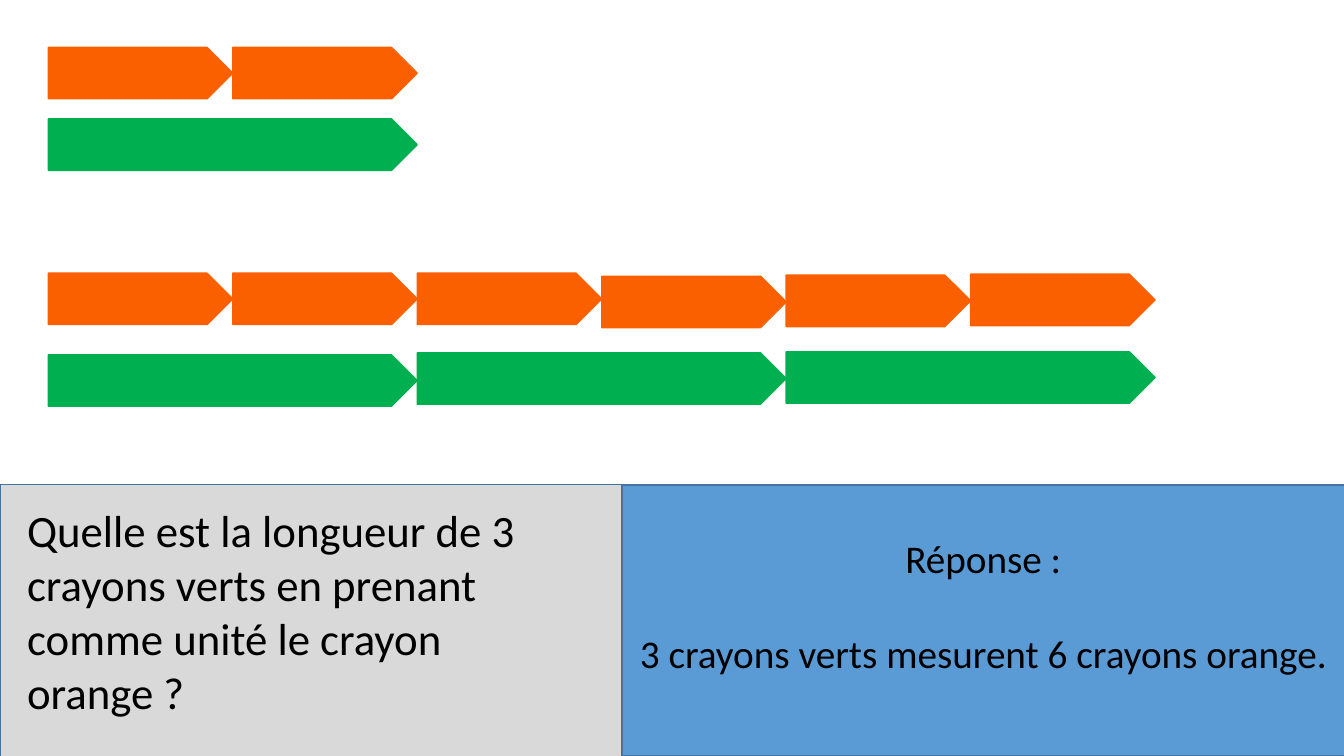
"""Build the slide that measures green pencils in orange pencils."""
from pptx import Presentation
from pptx.dml.color import RGBColor
from pptx.enum.shapes import MSO_SHAPE
from pptx.enum.text import MSO_ANCHOR, PP_ALIGN
from pptx.util import Pt

PX = 9144
THEME = {
    "font": "Calibri", "text": "000000",
    "orange": "FA5F00", "green": "00B050",
    "grey": "D9D9D9", "blue": "5B9BD5", "border": "43739E",
    "question": 32, "answer": 28,
}
LEFT, HEIGHT = 48, 51
LENGTH = {"orange": 183, "green": 366}


def add_box(shape, x, y, w, h, fill, line):
    sp = s.shapes.add_shape(shape, x * PX, y * PX, w * PX, h * PX)
    sp.shadow.inherit = False
    sp.fill.solid()
    sp.fill.fore_color.rgb = RGBColor.from_string(THEME[fill])
    sp.line.color.rgb = RGBColor.from_string(THEME[line])
    sp.line.width = Pt(1)
    return sp


def write(p, text, size, align=PP_ALIGN.LEFT, after=0):
    p.alignment = align
    p.space_after = Pt(after)
    r = p.add_run()
    r.text = text
    r.font.name = THEME["font"]
    r.font.size = Pt(THEME[size])
    r.font.color.rgb = RGBColor.from_string(THEME["text"])


prs = Presentation()
prs.slide_width, prs.slide_height = 12192000, 750 * PX
s = prs.slides.add_slide(prs.slide_layouts[6])

add_box(MSO_SHAPE.RECTANGLE, 0, 481, 1333, 270, "grey", "border")
question = s.shapes.add_textbox(17 * PX, 494 * PX, 559 * PX, 226 * PX)
tf = question.text_frame
tf.word_wrap = True
write(tf.paragraphs[0], "Quelle est la longueur de 3 crayons verts en prenant "
      "comme unité le crayon orange ?", "question")

answer = add_box(MSO_SHAPE.RECTANGLE, 617, 481, 717, 269, "blue", "border")
tf = answer.text_frame
tf.word_wrap = True
tf.vertical_anchor = MSO_ANCHOR.MIDDLE
tf.margin_bottom = 35 * PX
write(tf.paragraphs[0], "Réponse :", "answer", align=PP_ALIGN.CENTER, after=34)
write(tf.add_paragraph(), "3 crayons verts mesurent 6 crayons orange.", "answer",
      align=PP_ALIGN.CENTER)

pencil_rows = [
    ("orange", [47, 47]),
    ("green", [118]),
    ("green", [352, 350, 349]),
    ("orange", [271, 271, 271, 274, 273, 272]),
]
for color, tops in pencil_rows:
    for i, top in enumerate(tops):
        add_box(MSO_SHAPE.PENTAGON, LEFT + i * LENGTH[color], top,
                LENGTH[color], HEIGHT, color, color)

prs.save("out.pptx")
